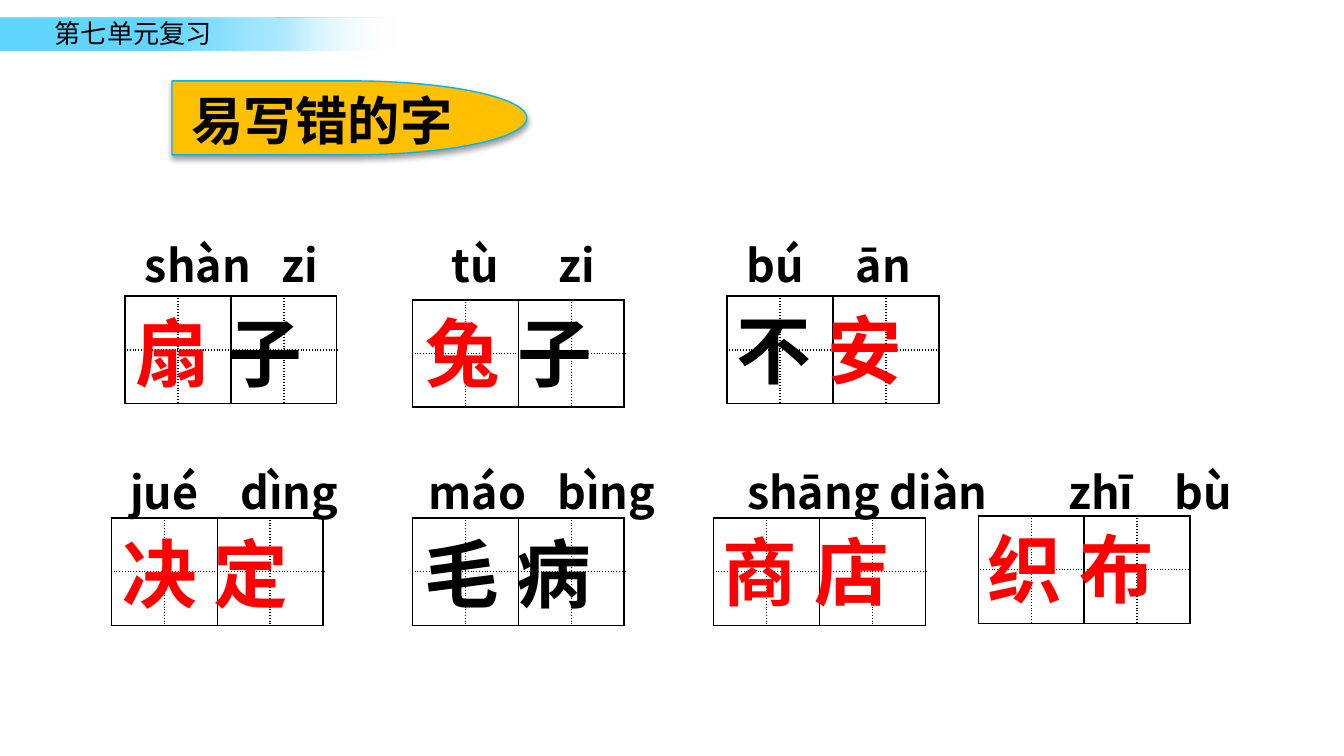
from lxml.etree import SubElement
from pptx import Presentation
from pptx.dml.color import RGBColor
from pptx.enum.shapes import MSO_SHAPE
from pptx.enum.text import MSO_ANCHOR, MSO_AUTO_SIZE, PP_ALIGN
from pptx.oxml import parse_xml
from pptx.oxml.ns import nsdecls, qn
from pptx.util import Inches, Pt

COLORS = {"black": "000000", "red": "FF0000", "gold": "FFC000", "outline": "00B5F4",
          "sky": "63D6FF", "pale": "97E4FF", "white": "FFFFFF"}
CHINESE, PINYIN = "Noto Sans CJK SC", "Noto Sans CJK JP"

presentation = Presentation()
presentation.slide_width = Inches(10)
presentation.slide_height = presentation.slide_width * 9 // 16
column, row = presentation.slide_width / 100, presentation.slide_height / 100
slide = presentation.slides.add_slide(presentation.slide_layouts[5])


def box(left, top, width, height):
    return [round(left * column), round(top * row), round(width * column), round(height * row)]


def write(paragraph, pieces, size, typeface, bold=True):
    for text, color in pieces:
        run = paragraph.add_run()
        run.text = text
        run.font.size, run.font.bold, run.font.name = Pt(size), bold, typeface
        run.font.color.rgb = RGBColor.from_string(COLORS[color])
        SubElement(run.font._element, qn("a:ea"), typeface=typeface)


header = slide.shapes.add_shape(MSO_SHAPE.RECTANGLE, *box(0, 2.4, 30.3, 4.27))
header.shadow.inherit = False
header.line.fill.background()
stops = "".join(
    f'<a:gs pos="{position}000"><a:srgbClr val="{COLORS[color]}"><a:alpha val="{alpha}000"/></a:srgbClr></a:gs>'
    for position, color, alpha in [(40, "sky", 100), (70, "pale", 76), (97, "white", 0)])
header.element.spPr.find(qn("a:prstGeom")).addnext(parse_xml(
    f'<a:gradFill {nsdecls("a")} rotWithShape="1"><a:gsLst>{stops}</a:gsLst><a:lin ang="0"/></a:gradFill>'))

unit = slide.shapes.add_textbox(*box(3.1, 1.45, 13.7, 6.05))
unit.text_frame.word_wrap = False
write(unit.text_frame.paragraphs[0], [("第七单元复习", "black")], 14, CHINESE, False)

banner = slide.shapes.add_shape(MSO_SHAPE.FLOWCHART_DELAY, *box(12.8, 10.7, 26.4, 9.8))
banner.fill.solid()
banner.fill.fore_color.rgb = RGBColor.from_string(COLORS["gold"])
banner.line.color.rgb = RGBColor.from_string(COLORS["outline"])
banner.line.width = Pt(0.75)
banner.element.spPr.append(parse_xml(
    f'<a:effectLst {nsdecls("a")}><a:outerShdw blurRad="{Pt(3.1)}" dist="{Pt(1.6)}" dir="5400000" rotWithShape="0">'
    f'<a:srgbClr val="{COLORS["black"]}"><a:alpha val="38000"/></a:srgbClr></a:outerShdw></a:effectLst>'))

title = slide.shapes.title
title.left, title.top, title.width, title.height = box(11.7, 10.9, 24.5, 9.8)
banner.element.addnext(title.element)
frame = title.text_frame
frame.auto_size, frame.vertical_anchor = MSO_AUTO_SIZE.NONE, MSO_ANCHOR.MIDDLE
frame.margin_left = frame.margin_right = Inches(0.07)
frame.margin_top = frame.margin_bottom = Inches(0.04)
frame.paragraphs[0].alignment = PP_ALIGN.CENTER
write(frame.paragraphs[0], [("易写错的字", "black")], 28, CHINESE)

pinyin_rows = [
    (9.8, 27.05, 12.63, "shàn\tzi\ttù\tzi\tbú\tān", [10.2, 22.8, 30.8, 44.8, 52.9]),
    (8.7, 57.05, 10.85, "jué\tdìng\tmáo\tbìng\tshāng diàn\tzhī\tbù",
     [8.2, 22.2, 31.8, 45.9, 69.8, 77.7]),
]
for left, top, height, syllables, tab_columns in pinyin_rows:
    pinyin = slide.shapes.add_textbox(*box(left, top, 92.4, height))
    pinyin.text_frame.word_wrap = True
    paragraph = pinyin.text_frame.paragraphs[0]
    paragraph.line_spacing = 1.5
    tabs = SubElement(paragraph._p.get_or_add_pPr(), qn("a:tabLst"))
    for tab_column in tab_columns:
        SubElement(tabs, qn("a:tab"), pos=str(round(tab_column * column)), algn="l")
    write(paragraph, [(syllables, "black")], 24, PINYIN)

words = [
    (9.3, 39.15, 9.1, 39.65, [("扇", "red"), (" 子", "black")]),
    (30.7, 39.65, 30.7, 39.65, [("兔", "red"), (" 子", "black")]),
    (54.1, 39.15, 53.8, 39.3, [("不 ", "black"), ("安", "red")]),
    (8.3, 68.5, 8.1, 69, [("决 定", "red")]),
    (30.7, 68.5, 30.6, 69, [("毛 病", "black")]),
    (53.1, 68.5, 52.8, 68.65, [("商 店", "red")]),
    (72.8, 68.25, 72.5, 68.25, [("织 布", "red")]),
]
for grid_left, grid_top, left, top, pieces in words:
    grid = slide.shapes.add_table(2, 4, *box(grid_left, grid_top, 15.75, 14.23)).table
    grid.first_row = grid.horz_banding = False
    for line in range(2):
        for place in range(4):
            cell = grid.cell(line, place)
            cell.margin_top = cell.margin_bottom = 0
            solid_sides = {"L": place % 2 == 0, "R": place % 2 == 1, "T": line == 0, "B": line == 1}
            for side, solid in solid_sides.items():
                cell._tc.get_or_add_tcPr().append(parse_xml(
                    f'<a:ln{side} {nsdecls("a")} w="{Pt(1)}"><a:solidFill><a:srgbClr val="{COLORS["black"]}"/>'
                    f'</a:solidFill><a:prstDash val="{"solid" if solid else "sysDot"}"/></a:ln{side}>'))
            cell.fill.background()
    word = slide.shapes.add_textbox(*box(left, top, 16.1, 13.7))
    word.text_frame.word_wrap = False
    write(word.text_frame.paragraphs[0], pieces, 40, CHINESE)

presentation.save("out.pptx")
